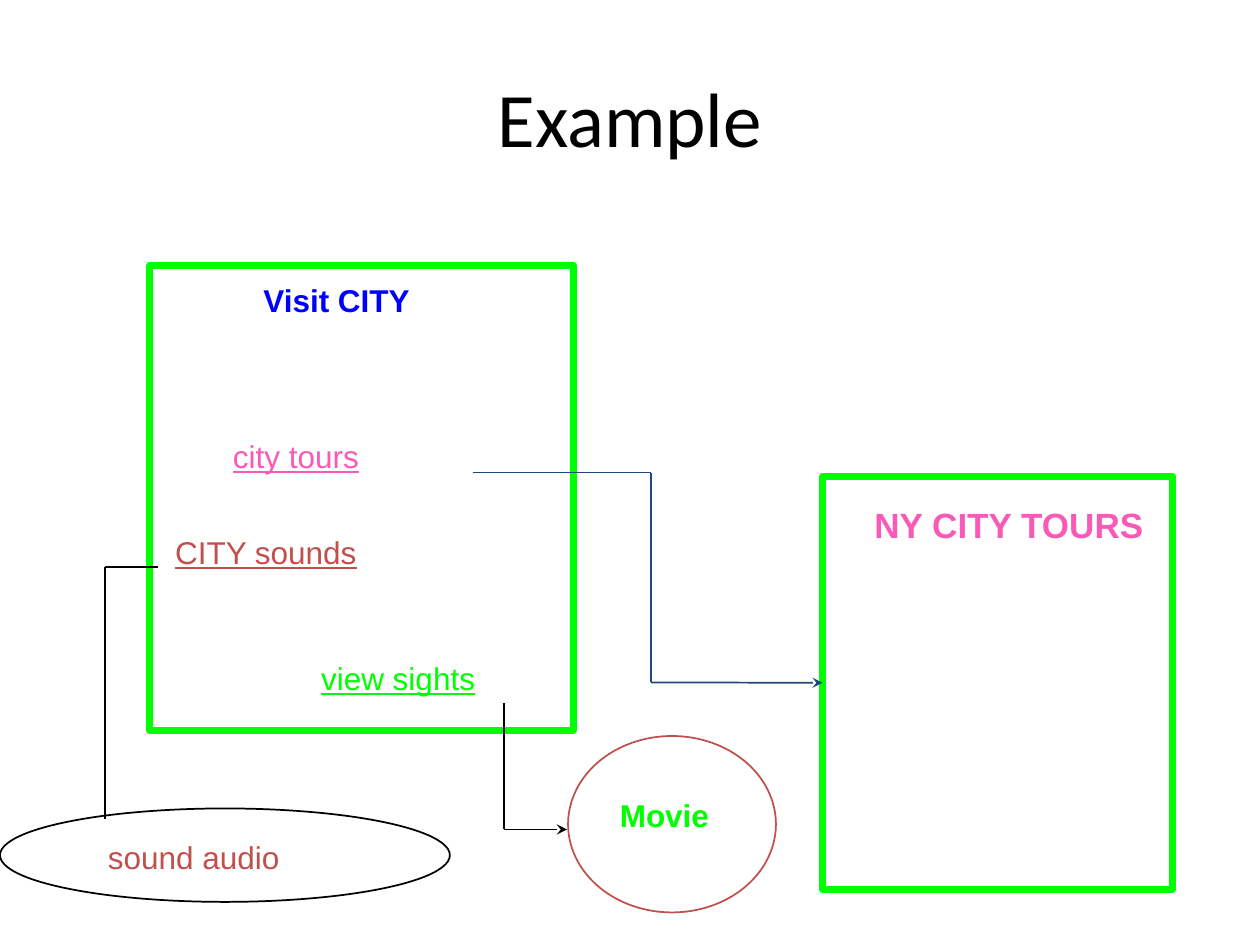
"""Build the Example slide: a storyboard of linked pages and media on a 120 by 90 grid."""
import itertools

import pptx
import pptx.dml.color
import pptx.enum.shapes
import pptx.enum.text
import pptx.oxml
import pptx.oxml.ns
import pptx.util

SHAPE = pptx.enum.shapes.MSO_SHAPE
TEXT = pptx.enum.text

THEME = {
    "black": "000000", "green": "00FF00", "blue": "0000FF",
    "pink": "F95AB7", "red": "C0504D", "navy": "1F497D",
    "title_font": "Calibri", "body_font": "Arial",
    "title": 44, "heading": 20, "body": 18,
    "frame": 4, "thin": 1,
}
COLUMNS, ROWS = 120, 90
CELL = pptx.util.Inches(10) // COLUMNS

TITLE = ("Example", (6, 3.6, 108, 15))
OUTLINES = {
    "visit page": (SHAPE.RECTANGLE, (14.25, 25.3, 40.35, 44.25), "green", "frame"),
    "tours page": (SHAPE.RECTANGLE, (78.35, 45.35, 33.35, 39.35), "green", "frame"),
    "audio": (SHAPE.OVAL, (0, 77, 42.85, 8.9), "black", "thin"),
    "movie": (SHAPE.OVAL, (54.1, 70.1, 19.8, 16.8), "red", "thin"),
}
LABELS = [
    ("Visit CITY", (23.9, 26.15, 17.9, 4.8), "blue", "body", "bold"),
    ("city tours", (21, 41, 25.55, 4.8), "pink", "body", "underline"),
    ("NY CITY TOURS", (82.1, 47.4, 28.3, 5.3), "pink", "heading", "bold"),
    ("CITY sounds", (15.5, 50.15, 21.25, 4.8), "red", "body", "underline"),
    ("view sights", (29.4, 62.15, 17.3, 4.8), "green", "body", "underline"),
    ("sound audio", (9.1, 79.2, 18.95, 4.8), "red", "body", None),
    ("Movie", (57.85, 75.25, 11.05, 4.8), "green", "body", "bold"),
]
ROUTES = [
    ([(45, 45), (62, 45), (62, 65), (78, 65)], "navy", True, "tours page"),
    ([(48, 67), (48, 79), (54, 79)], "black", True, None),
    ([(15, 54), (10, 54), (10, 78)], "black", False, None),
]


def grid(values):
    return [round(v * CELL) for v in values]


def color(name):
    return pptx.dml.color.RGBColor.from_string(THEME[name])


def add_outline(s, kind, box, ink, weight):
    sp = s.shapes.add_shape(kind, *grid(box))
    sp.shadow.inherit = False
    sp.fill.background()
    sp.line.color.rgb = color(ink)
    sp.line.width = pptx.util.Pt(THEME[weight])
    return sp


def add_text(s, text, box, ink, size, font="body_font", style=None):
    tf = s.shapes.add_textbox(*grid(box)).text_frame
    tf.word_wrap = False
    p = tf.paragraphs[0]
    p.text = text
    p.font.name = THEME[font]
    p.font.size = pptx.util.Pt(THEME[size])
    p.font.color.rgb = color(ink)
    if style:
        setattr(p.font, style, True)
    return tf


def add_line(s, start, end, ink, arrow):
    c = s.shapes.add_connector(
        pptx.enum.shapes.MSO_CONNECTOR.STRAIGHT, *grid(start + end))
    c.line.color.rgb = color(ink)
    c.line.width = pptx.util.Pt(THEME["thin"])
    if arrow:
        tail = pptx.oxml.parse_xml(
            f'<a:tailEnd {pptx.oxml.ns.nsdecls("a")} type="stealth"/>')
        c.line._get_or_add_ln().append(tail)
    c._element.spPr.append(
        pptx.oxml.parse_xml(f'<a:effectLst {pptx.oxml.ns.nsdecls("a")}/>'))
    return c


def main():
    prs = pptx.Presentation()
    prs.slide_width, prs.slide_height = COLUMNS * CELL, ROWS * CELL
    s = prs.slides.add_slide(prs.slide_layouts[6])

    tf = add_text(s, *TITLE, "black", "title", "title_font")
    tf.word_wrap = True
    tf.vertical_anchor = TEXT.MSO_ANCHOR.MIDDLE
    tf.paragraphs[0].alignment = TEXT.PP_ALIGN.CENTER

    outlines = {name: add_outline(s, *row) for name, row in OUTLINES.items()}
    for text, box, ink, size, style in LABELS:
        tf = add_text(s, text, box, ink, size, style=style)
        tf.auto_size = TEXT.MSO_AUTO_SIZE.SHAPE_TO_FIT_TEXT
    for points, ink, arrow, target in ROUTES:
        for start, end in itertools.pairwise(points):
            last = end == points[-1]
            c = add_line(s, start, end, ink, arrow and last)
            if target and last:
                c.end_connect(outlines[target], 1)

    prs.save("out.pptx")


if __name__ == "__main__":
    main()
